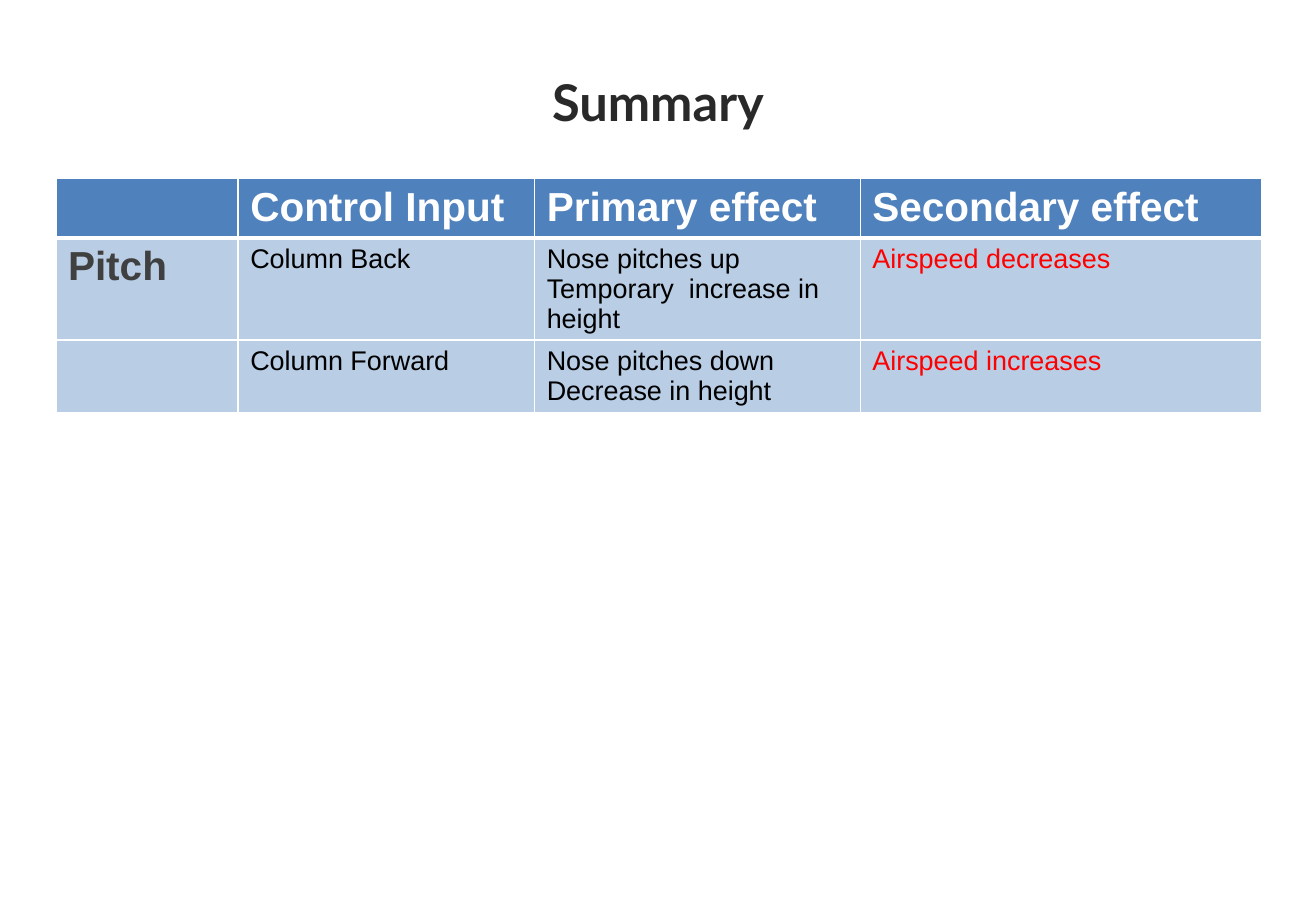
from dataclasses import dataclass

import pptx
import pptx.dml.color
import pptx.enum.text
import pptx.oxml.ns
import pptx.util
from lxml import etree

TITLE = "Summary"
HEADERS = ["", "Control Input", "Primary effect", "Secondary effect"]
EFFECTS = [
    ["Pitch", "Column Back", "Nose pitches up\nTemporary  increase in height", "Airspeed decreases"],
    ["", "Column Forward", "Nose pitches down\nDecrease in height", "Airspeed increases"],
]

SLIDE_SIZE = (10.83, 7.5)
TITLE_BOX = (0.54, 0.52, 9.75, 0.63)
TABLE_ORIGIN = (0.46, 1.47)
COLUMN_WIDTHS = [1.5, 2.44, 2.68, 3.3]
ROW_HEIGHTS = [0.49, 0.84, 0.58]


@dataclass(frozen=True)
class Theme:
    title_font: str = "Lato"
    table_font: str = "Arial"
    title_size: int = 30
    heading_size: int = 24
    body_size: int = 16
    title: str = "292929"
    header_text: str = "FFFFFF"
    row_label: str = "404040"
    body_text: str = "000000"
    secondary: str = "FF0000"
    header_fill: str = "4F81BD"
    body_fill: str = "B9CDE5"
    border: str = "FFFFFF"
    thin: int = 1
    thick: int = 3


THEME = Theme()


def rgb(color):
    return pptx.dml.color.RGBColor.from_string(color)


def style_text(text_frame, color, **font_values):
    for paragraph in text_frame.paragraphs:
        for run in paragraph.runs:
            for name, value in font_values.items():
                setattr(run.font, name, value)
            run.font.color.rgb = rgb(color)


def set_borders(cell, widths):
    """Draw solid cell borders; widths maps a side (L, R, T, B) to points."""
    properties = cell._tc.get_or_add_tcPr()
    for side, width in widths.items():
        line = etree.SubElement(properties, pptx.oxml.ns.qn(f"a:ln{side}"),
                                w=str(pptx.util.Pt(width)))
        fill = etree.SubElement(line, pptx.oxml.ns.qn("a:solidFill"))
        etree.SubElement(fill, pptx.oxml.ns.qn("a:srgbClr"), val=THEME.border)


def cell_style(row, column):
    """Return text colour, size and weight for a table position."""
    if row == 0:
        return THEME.header_text, THEME.heading_size, True
    if column == 0:
        return THEME.row_label, THEME.heading_size, True
    is_secondary = column == len(HEADERS) - 1
    return THEME.secondary if is_secondary else THEME.body_text, THEME.body_size, False


def add_title(slide):
    title = slide.shapes.title
    for name, value in zip(("left", "top", "width", "height"), TITLE_BOX):
        setattr(title, name, pptx.util.Inches(value))
    title.text_frame.text = TITLE
    title.text_frame.vertical_anchor = pptx.enum.text.MSO_ANCHOR.MIDDLE
    title.text_frame.paragraphs[0].alignment = pptx.enum.text.PP_ALIGN.CENTER
    style_text(title.text_frame, THEME.title, name=THEME.title_font,
               size=pptx.util.Pt(THEME.title_size), bold=True)


def add_effects_table(slide):
    rows = [HEADERS, *EFFECTS]
    box = (*TABLE_ORIGIN, sum(COLUMN_WIDTHS), sum(ROW_HEIGHTS))
    table = slide.shapes.add_table(len(rows), len(HEADERS), *map(pptx.util.Inches, box)).table
    for column, width in zip(table.columns, COLUMN_WIDTHS):
        column.width = pptx.util.Inches(width)
    for row, height in zip(table.rows, ROW_HEIGHTS):
        row.height = pptx.util.Inches(height)
    for r, texts in enumerate(rows):
        top = THEME.thick if r == 1 else THEME.thin
        bottom = THEME.thick if r == 0 else THEME.thin
        for c, text in enumerate(texts):
            cell = table.cell(r, c)
            set_borders(cell, {"L": THEME.thin, "R": THEME.thin, "T": top, "B": bottom})
            cell.fill.solid()
            cell.fill.fore_color.rgb = rgb(THEME.header_fill if r == 0 else THEME.body_fill)
            cell.text_frame.text = text
            color, size, bold = cell_style(r, c)
            style_text(cell.text_frame, color, name=THEME.table_font,
                       size=pptx.util.Pt(size), bold=bold)


def main():
    presentation = pptx.Presentation()
    presentation.slide_width, presentation.slide_height = map(pptx.util.Inches, SLIDE_SIZE)
    slide = presentation.slides.add_slide(presentation.slide_layouts.get_by_name("Title Only"))
    add_title(slide)
    add_effects_table(slide)
    presentation.save("out.pptx")


if __name__ == "__main__":
    main()
